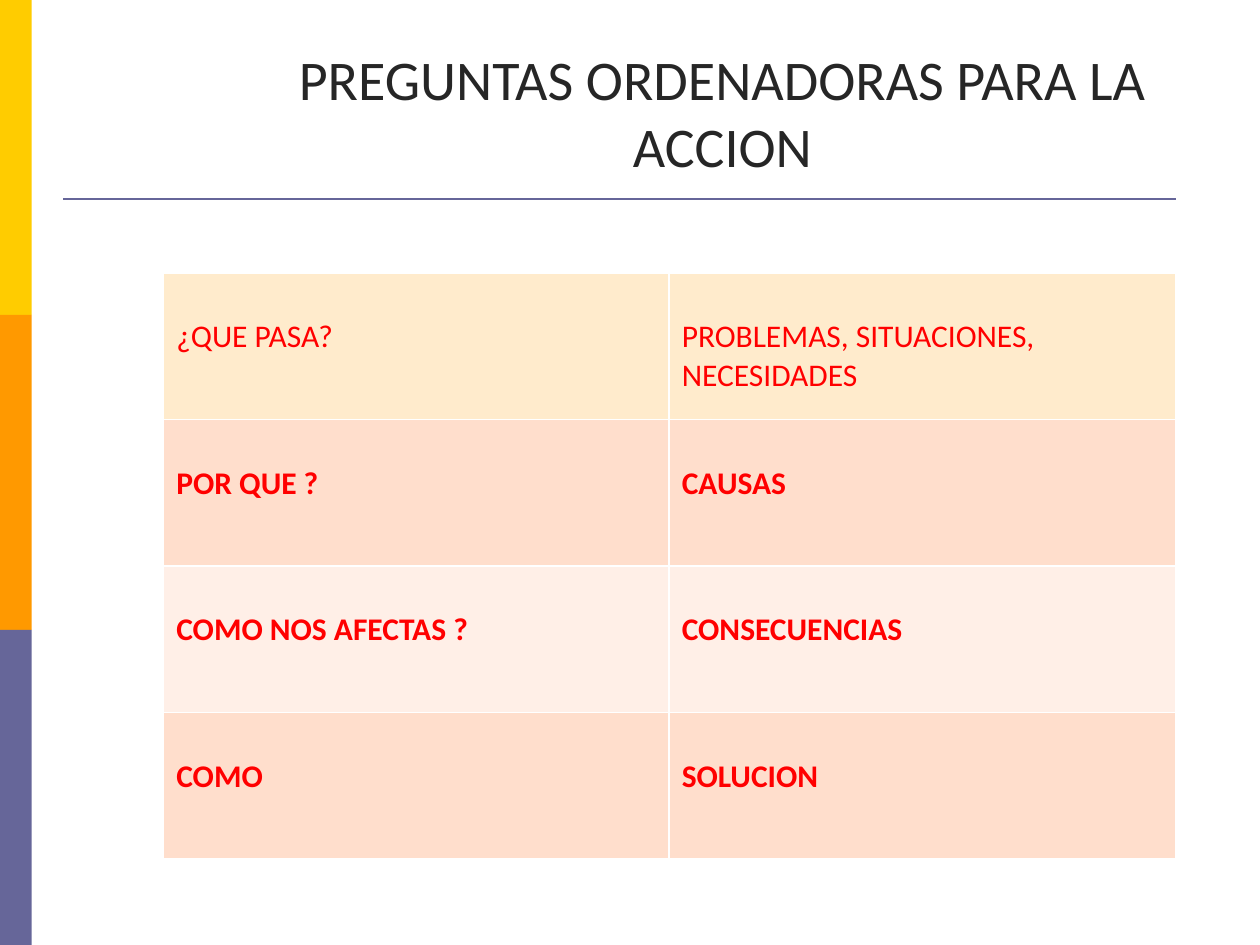
from dataclasses import dataclass

from lxml import etree
from pptx import Presentation
from pptx import util as u
from pptx.dml.color import RGBColor
from pptx.enum import shapes, text
from pptx.oxml import ns
from pptx.slide import Slide
from pptx.table import _Cell
from pptx.text.text import TextFrame

FONT = "Calibri"
BAR_WIDTH, BAR_HEIGHT = 0.64, 6.35
BAR_COLORS = ("FFCC00", "FF9900", "666699")
COLUMN_WIDTHS = (10.19, 10.21)
ROW_HEIGHT = 2.95


@dataclass
class Row:
    question: str
    topic: str
    fill: str
    bold: bool = True


ROWS = (
    Row("¿QUE PASA?", "PROBLEMAS, SITUACIONES, NECESIDADES", "FFEBCC", False),
    Row("POR QUE ?", "CAUSAS", "FFDECC"),
    Row("COMO NOS AFECTAS ?", "CONSECUENCIAS", "FFEFE7"),
    Row("COMO", "SOLUCION", "FFDECC"),
)


def set_color(color_format, value: str) -> None:
    color_format.rgb = RGBColor.from_string(value)


def write(frame: TextFrame, content: str, size: int, color: str, bold: bool = False) -> None:
    frame.text = content
    for paragraph in frame.paragraphs:
        for run in paragraph.runs:
            run.font.name = FONT
            run.font.size = u.Pt(size)
            run.font.bold = bold
            set_color(run.font.color, color)


def add_bar(slide: Slide, index: int, color: str) -> None:
    shape = slide.shapes.add_shape(
        shapes.MSO_SHAPE.RECTANGLE,
        u.Cm(0), u.Cm(index * BAR_HEIGHT), u.Cm(BAR_WIDTH), u.Cm(BAR_HEIGHT),
    )
    shape.shadow.inherit = False
    shape.fill.solid()
    set_color(shape.fill.fore_color, color)
    shape.line.fill.background()


def add_rule(slide: Slide) -> None:
    rule = slide.shapes.add_connector(
        shapes.MSO_CONNECTOR.STRAIGHT, u.Cm(1.27), u.Cm(4.01), u.Cm(23.7), u.Cm(4.01)
    )
    rule.line.width = u.Pt(1.5)
    set_color(rule.line.color, "666699")
    etree.SubElement(rule._element.spPr, ns.qn("a:effectLst"))


def add_title(slide: Slide) -> None:
    title = slide.shapes.add_textbox(u.Cm(5.41), u.Cm(0.53), u.Cm(18.31), u.Cm(3.2))
    frame = title.text_frame
    frame.word_wrap = True
    frame.vertical_anchor = text.MSO_ANCHOR.BOTTOM
    write(frame, "PREGUNTAS ORDENADORAS PARA LA ACCION", 32, "262626")
    frame.paragraphs[0].alignment = text.PP_ALIGN.CENTER


def add_borders(cell: _Cell, color: str) -> None:
    properties = cell._tc.get_or_add_tcPr()
    for side in "LRTB":
        border = etree.SubElement(properties, ns.qn(f"a:ln{side}"), w=str(u.Pt(1)))
        fill = etree.SubElement(border, ns.qn("a:solidFill"))
        etree.SubElement(fill, ns.qn("a:srgbClr"), val=color)


def fill_cell(cell: _Cell, content: str, row: Row) -> None:
    add_borders(cell, "FFFFFF")
    cell.fill.solid()
    set_color(cell.fill.fore_color, row.fill)
    cell.margin_top = u.Cm(0.9)
    write(cell.text_frame, content, 18, "FF0000", row.bold)


def add_questions(slide: Slide) -> None:
    table = slide.shapes.add_table(
        len(ROWS), len(COLUMN_WIDTHS), u.Cm(3.3), u.Cm(5.51),
        u.Cm(sum(COLUMN_WIDTHS)), u.Cm(ROW_HEIGHT * len(ROWS)),
    ).table
    table.first_row = False
    table.horz_banding = False
    for column, width in zip(table.columns, COLUMN_WIDTHS):
        column.width = u.Cm(width)
    for index, row in enumerate(ROWS):
        table.rows[index].height = u.Cm(ROW_HEIGHT)
        for position, content in enumerate((row.question, row.topic)):
            fill_cell(table.cell(index, position), content, row)


def main() -> None:
    presentation = Presentation()
    presentation.slide_width = u.Cm(25.4)
    presentation.slide_height = u.Cm(19.05)
    slide = presentation.slides.add_slide(presentation.slide_layouts[6])
    for index, color in enumerate(BAR_COLORS):
        add_bar(slide, index, color)
    add_rule(slide)
    add_title(slide)
    add_questions(slide)
    presentation.save("out.pptx")


if __name__ == "__main__":
    main()
